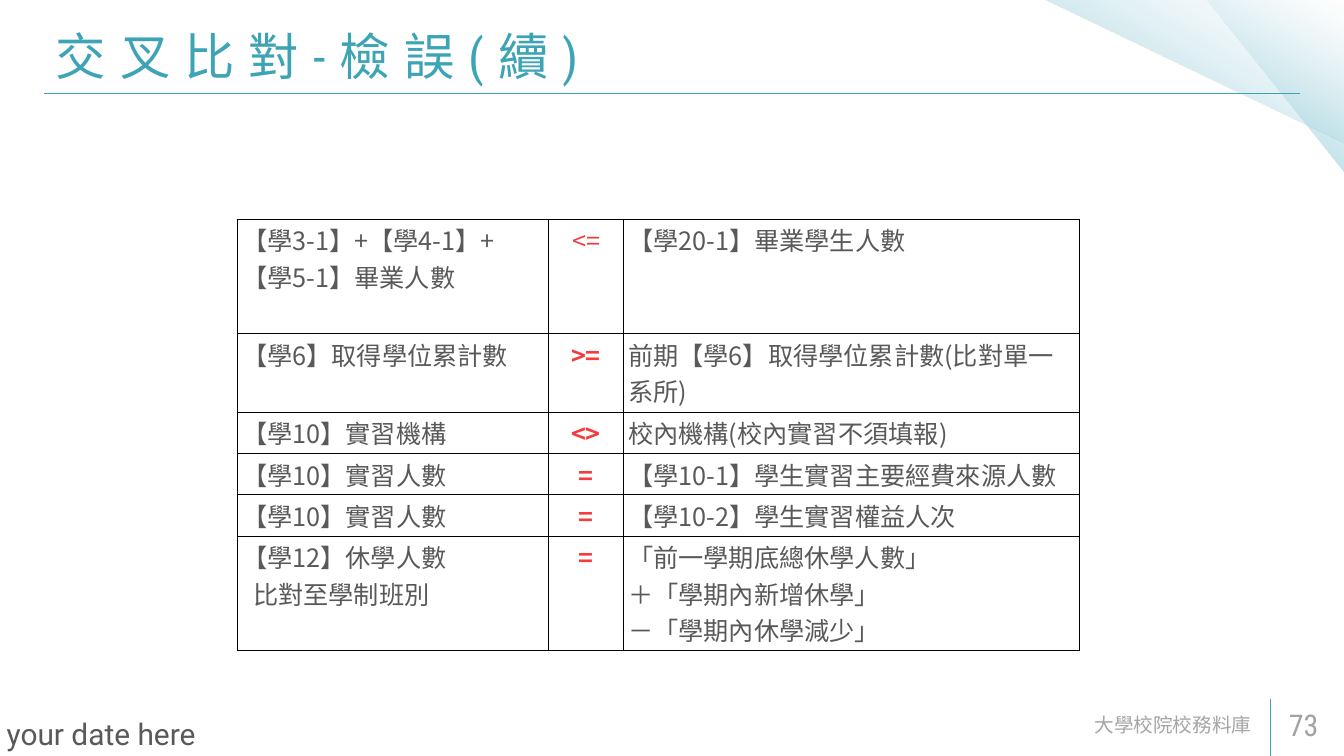
from pptx import Presentation
from pptx.dml.color import RGBColor
from pptx.enum.shapes import MSO_CONNECTOR, MSO_SHAPE
from pptx.enum.text import MSO_ANCHOR, PP_ALIGN
from pptx.oxml import parse_xml
from pptx.oxml.ns import nsdecls, qn
from pptx.util import Cm, Pt
from lxml import etree

TRIANGLE = MSO_SHAPE.RIGHT_TRIANGLE
STRAIGHT = MSO_CONNECTOR.STRAIGHT
TOP, MIDDLE = MSO_ANCHOR.TOP, MSO_ANCHOR.MIDDLE
LEFT, CENTER, RIGHT = PP_ALIGN.LEFT, PP_ALIGN.CENTER, PP_ALIGN.RIGHT

TEAL = RGBColor(0x3D, 0xA4, 0xB5)
TEXT = RGBColor(0x59, 0x59, 0x59)
RED = RGBColor(0xF7, 0x3B, 0x3B)
FOOTER = RGBColor(0x80, 0x80, 0x80)
NUMBER = RGBColor(0xA2, 0xA2, 0xA2)
BLACK = RGBColor(0, 0, 0)
# Gradient stops: position %, colour, opacity %
FADE = [
    (0, RGBColor(0x97, 0xD1, 0xE0), 100),
    (50, RGBColor(0xAA, 0xD7, 0xE2), 44),
    (100, RGBColor(0xE0, 0xF0, 0xF4), 0),
]

CJK = "Noto Sans CJK SC"
ROBOTO = "Roboto"
CONDENSED = "Roboto Condensed"

COLUMNS = [11.77, 2.82, 17.25]
ROW_HEIGHTS = [4.32, 2.98, 1.56, 1.56, 1.56, 4.34]
CHECKS = [
    ("【學3-1】+【學4-1】+【學5-1】畢業人數", "<=", "【學20-1】畢業學生人數"),
    ("【學6】取得學位累計數", ">=", "前期【學6】取得學位累計數(比對單一系所)"),
    ("【學10】實習機構", "<>", "校內機構(校內實習不須填報)"),
    ("【學10】實習人數", "=", "【學10-1】學生實習主要經費來源人數"),
    ("【學10】實習人數", "=", "【學10-2】學生實習權益人次"),
    ("【學12】休學人數\n比對至學制班別", "=",
     "「前一學期底總休學人數」\n＋「學期內新增休學」\n－「學期內休學減少」"),
]


class SlideBuilder:
    """Holds the current slide and draws its elements; lengths in cm."""

    def __init__(self, page):
        self.page = page

    def style(self, frame, size, font, color, align=LEFT, bold=False):
        for para in frame.paragraphs:
            para.alignment = align
            for span in para.runs:
                span.font.size = Pt(size)
                span.font.name = font
                span.font.bold = bold
                span.font.color.rgb = color
                east = etree.SubElement(span.font._element, qn("a:ea"))
                east.set("typeface", CJK)

    def triangle(self, left, top, width, height):
        shape = self.page.shapes.add_shape(
            TRIANGLE, Cm(left), Cm(top), Cm(width), Cm(height))
        shape.rotation = 180
        shape.shadow.inherit = False
        shape.line.fill.background()
        stops = "".join(
            f'<a:gs pos="{place * 1000}"><a:srgbClr val="{color}">'
            f'<a:alpha val="{opacity * 1000}"/></a:srgbClr></a:gs>'
            for place, color, opacity in FADE)
        gradient = parse_xml(
            f'<a:gradFill {nsdecls("a")} rotWithShape="1"><a:gsLst>{stops}'
            '</a:gsLst><a:lin ang="7200000" scaled="0"/></a:gradFill>')
        shape._element.spPr.find(qn("a:prstGeom")).addnext(gradient)

    def line(self, x1, y1, x2, y2):
        line = self.page.shapes.add_connector(
            STRAIGHT, Cm(x1), Cm(y1), Cm(x2), Cm(y2))
        line.line.color.rgb = TEAL
        line.line.width = Pt(1)
        etree.SubElement(line._element.spPr, qn("a:effectLst"))

    def text(self, words, left, top, width, height, size, font, color,
             align=LEFT, anchor=MIDDLE, inset=(0.46, 0.23)):
        box = self.page.shapes.add_textbox(
            Cm(left), Cm(top), Cm(width), Cm(height))
        frame = box.text_frame
        frame.word_wrap = True
        frame.vertical_anchor = anchor
        frame.margin_left = frame.margin_right = Cm(inset[0])
        frame.margin_top = frame.margin_bottom = Cm(inset[1])
        frame.text = words
        self.style(frame, size, font, color, align)
        return frame.paragraphs[0].runs[0]

    def borders(self, cell):
        properties = cell._tc.get_or_add_tcPr()
        for place, side in enumerate(("lnL", "lnR", "lnT", "lnB")):
            properties.insert(place, parse_xml(
                f'<a:{side} {nsdecls("a")} w="12700"><a:solidFill>'
                f'<a:srgbClr val="{BLACK}"/></a:solidFill></a:{side}>'))

    def table(self, left, top, rows, widths, heights):
        table = self.page.shapes.add_table(
            len(rows), len(widths), Cm(left), Cm(top),
            Cm(sum(widths)), Cm(sum(heights))).table
        table.first_row = table.horz_banding = False
        for column, width in zip(table.columns, widths):
            column.width = Cm(width)
        for row, height in zip(table.rows, heights):
            row.height = Cm(height)
        for i, values in enumerate(rows):
            for j, words in enumerate(values):
                cell = table.cell(i, j)
                cell.margin_left = cell.margin_right = Cm(0.18)
                cell.margin_top = cell.margin_bottom = Cm(0.1)
                cell.fill.background()
                cell.text_frame.text = words
                if j == 1:
                    self.style(cell.text_frame, 27, CJK, RED, CENTER, i > 0)
                else:
                    self.style(cell.text_frame, 27, CJK, TEXT)
                self.borders(cell)
        return table


def main():
    deck = Presentation()
    deck.slide_width, deck.slide_height = Cm(50.8), Cm(28.58)
    builder = SlideBuilder(deck.slides.add_slide(deck.slide_layouts[6]))

    # Corner decoration and rules
    builder.triangle(45.62, 0, 5.18, 6.53)
    builder.triangle(39.47, 0, 11.38, 5.41)
    builder.line(1.68, 3.53, 49.12, 3.53)
    builder.line(48.03, 28.58, 48.03, 26.42)

    # Title with wide letter spacing
    title = builder.text("交叉比對-檢誤(續)", 1.65, 0.53, 46.51, 3.12,
                         54, CONDENSED, TEAL)
    title.font._element.set("spc", "1500")

    # Footer, page number and date
    footer = builder.text("大學校院校務料庫", 26.17, 26.64, 21.59, 1.52,
                          21, ROBOTO, FOOTER, RIGHT)
    shade = footer.font._element.find(qn("a:solidFill"))[0]
    etree.SubElement(shade, qn("a:alpha")).set("val", "70000")
    builder.text("73", 48.26, 26.64, 2.51, 1.52, 32, CONDENSED, NUMBER)
    builder.text("your date here", 0, 26.92, 11.43, 1.17, 32, ROBOTO, TEXT,
                 anchor=TOP, inset=(0.25, 0.13))

    # Cross-check table, with the note in the last row indented
    table = builder.table(8.97, 8.28, CHECKS, COLUMNS, ROW_HEIGHTS)
    note = table.cell(len(CHECKS) - 1, 0).text_frame.paragraphs[1]
    note._p.get_or_add_pPr().set("marL", str(Cm(0.42)))

    deck.save("out.pptx")


if __name__ == "__main__":
    main()
